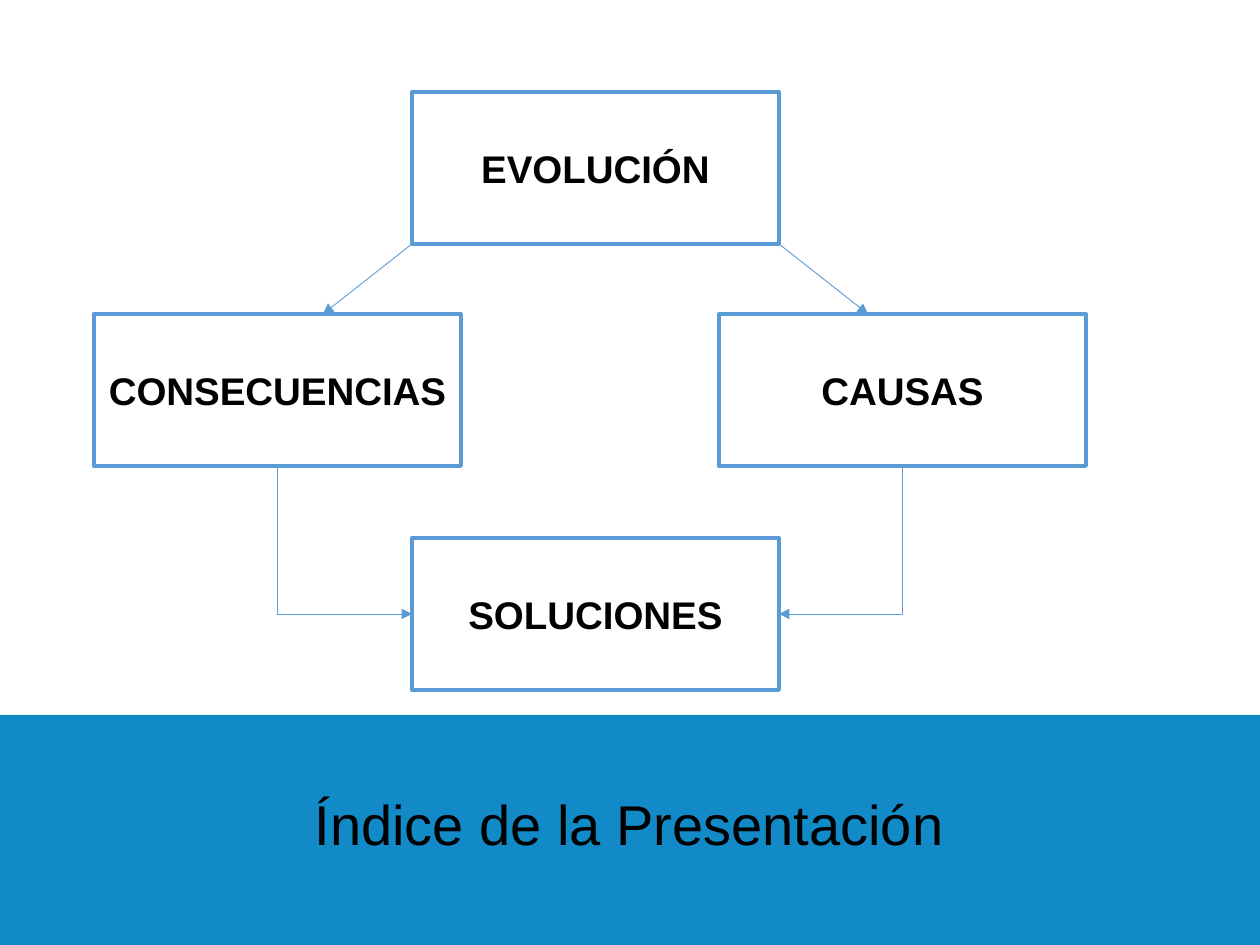
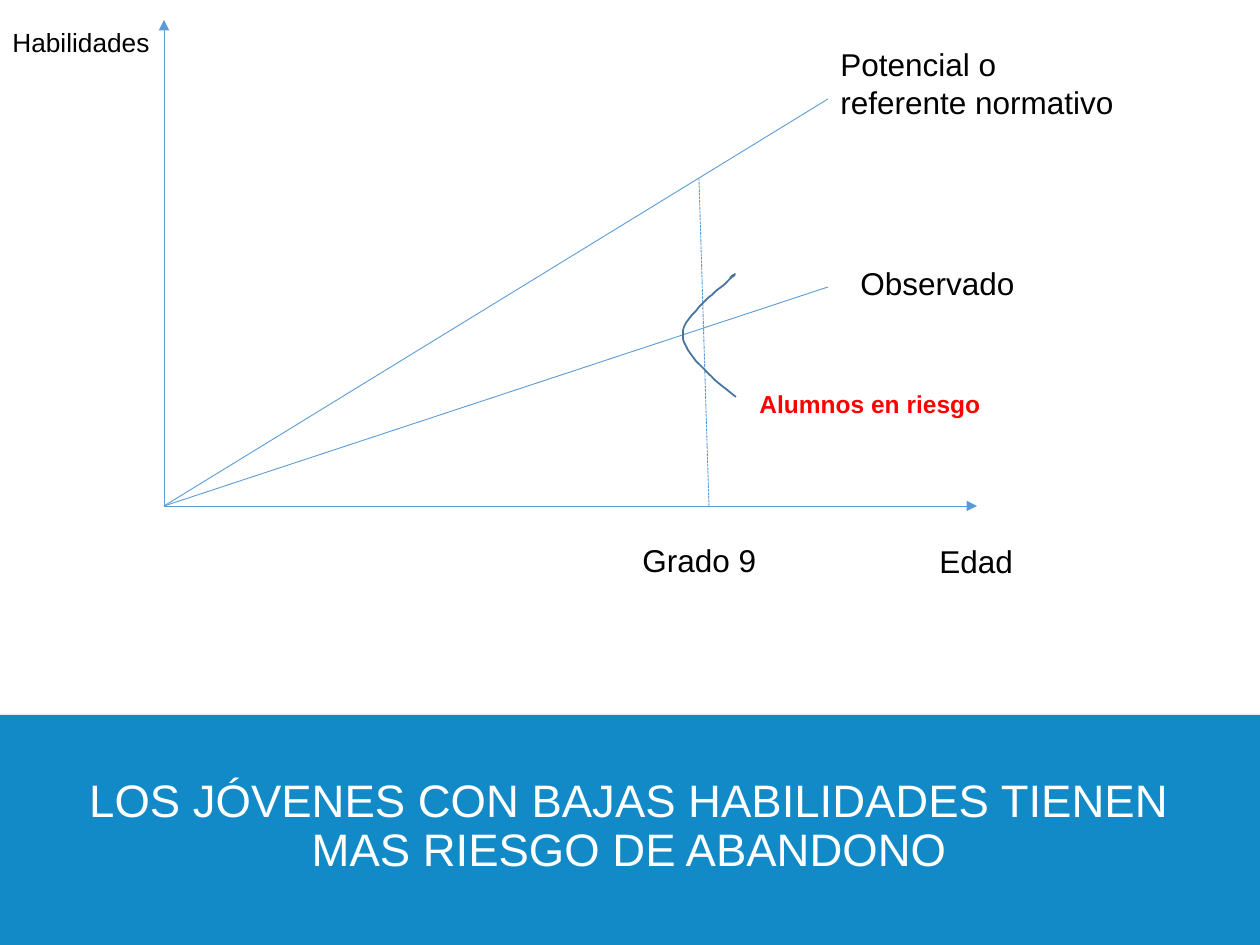
from lxml import etree
from pptx import Presentation
from pptx.dml.color import RGBColor
from pptx.enum.dml import MSO_LINE
from pptx.enum.shapes import MSO_CONNECTOR, MSO_SHAPE
from pptx.enum.text import MSO_ANCHOR, PP_ALIGN
from pptx.oxml.ns import qn
from pptx.util import Emu, Pt

SCALE = 914400 / 126
SLIDE_W, SLIDE_H = 1260, 945
BAND = (0, 715, 1260, 231)
FONT = "Arial"
COLORS = {
    "band": "118AC7",
    "line": "5B9BD5",
    "curve": "43739E",
    "text": "000000",
    "light": "FFFFFF",
    "risk": "FF0000",
}


def px(*lengths):
    return [Emu(round(n * SCALE)) for n in lengths]


def rgb(name):
    return RGBColor.from_string(COLORS[name])


def style_text(p, size, color="text", bold=False, align=None):
    p.alignment = align
    p.font.name = FONT
    p.font.size = Pt(size)
    p.font.bold = bold
    p.font.color.rgb = rgb(color)


def add_band_title(prs, text, size, color):
    """Add a title-only slide with its title centred on the bottom band."""
    slide = prs.slides.add_slide(prs.slide_layouts[5])
    x, y, w, h = BAND
    band = slide.shapes.add_shape(MSO_SHAPE.RECTANGLE, *px(x, y, w, h))
    band.shadow.inherit = False
    band.fill.solid()
    band.fill.fore_color.rgb = rgb("band")
    band.line.fill.background()

    title = slide.shapes.title
    slide.shapes._spTree.append(title._element)  # bring in front of the band
    title.left, title.top, title.width, title.height = px(x + 47, y + 56, 1165, 112)
    tf = title.text_frame
    tf.text = text
    tf.word_wrap = True
    tf.vertical_anchor = MSO_ANCHOR.MIDDLE
    p = tf.paragraphs[0]
    style_text(p, size, color, align=PP_ALIGN.CENTER)
    p.line_spacing = 0.9
    return slide


def add_line(slide, start, end, arrow=False, kind=MSO_CONNECTOR.STRAIGHT):
    line = slide.shapes.add_connector(kind, *px(*start, *end))
    line.line.color.rgb = rgb("line")
    line.line.width = Pt(0.5)
    if arrow:
        ln = line.line._get_or_add_ln()
        etree.SubElement(ln, qn("a:tailEnd"), type="triangle")
    etree.SubElement(line._element.spPr, qn("a:effectLst"))
    return line


def add_elbow(slide, start, end):
    """Run an arrow straight down from start, then sideways into end."""
    (x1, y1), (x2, y2) = start, end
    cx, cy = (x1 + x2) / 2, (y1 + y2) / 2
    half_w, half_h = abs(y2 - y1) / 2, abs(x2 - x1) / 2
    to_right = x2 > x1
    if to_right:
        half_w = -half_w  # begins at the right, so the frame is flipped
    line = add_line(slide, (cx - half_w, cy - half_h), (cx + half_w, cy + half_h),
                    arrow=True, kind=MSO_CONNECTOR.ELBOW)
    spPr = line._element.spPr
    spPr.find(qn("a:prstGeom")).set("prst", "bentConnector2")
    degrees = 270 if to_right else 90
    spPr.find(qn("a:xfrm")).set("rot", str(degrees * 60000))


def add_node(slide, text, x, y, w, h):
    sp = slide.shapes.add_shape(MSO_SHAPE.RECTANGLE, *px(x, y, w, h))
    sp.shadow.inherit = False
    sp.fill.background()
    sp.line.color.rgb = rgb("line")
    sp.line.width = Pt(2.25)
    tf = sp.text_frame
    tf.text = text
    tf.word_wrap = True
    tf.vertical_anchor = MSO_ANCHOR.MIDDLE
    style_text(tf.paragraphs[0], 22, bold=True, align=PP_ALIGN.CENTER)


def add_index_diagram(slide, x, y, w, h):
    node_w, node_h = 367, 152
    left, right = x, x + w - node_w
    mid = x + 318
    row, bottom = y + 222, y + h - node_h
    for text, nx, ny in (
        ("EVOLUCIÓN", mid, y),
        ("CONSECUENCIAS", left, row),
        ("CAUSAS", right, row),
        ("SOLUCIONES", mid, bottom),
    ):
        add_node(slide, text, nx, ny, node_w, node_h)

    mid_right = mid + node_w
    spread = 89
    add_line(slide, (mid, y + node_h), (mid - spread, row), arrow=True)
    add_line(slide, (mid_right, y + node_h), (mid_right + spread, row), arrow=True)
    for nx, target_x in ((left, mid), (right, mid_right)):
        add_elbow(slide, (nx + node_w / 2, row + node_h),
                  (target_x, bottom + node_h / 2))


def add_label(slide, text, x, y, w, h, size=18, color="text", bold=False):
    tf = slide.shapes.add_textbox(*px(x, y, w, h)).text_frame
    tf.word_wrap = True
    tf.text = text
    style_text(tf.paragraphs[0], size, color, bold)


def bezier(p0, p1, p2, p3, steps=16):
    """Return points along a cubic curve, without its start."""
    points = []
    for i in range(1, steps + 1):
        t = i / steps
        u = 1 - t
        points.append(tuple(
            u**3 * a + 3 * u * u * t * b + 3 * u * t * t * c + t**3 * d
            for a, b, c, d in zip(p0, p1, p2, p3)))
    return points


def add_risk_curve(slide, x, y):
    """Draw the bulging curve with its upper left corner at x, y."""
    start, bulge, top, tip = (53, 123), (0, 61), (48, 4), (47, 4)
    points = (bezier(start, (26, 101), (1, 80), bulge)
              + bezier(bulge, (-1, 41), (40, 13), top)
              + bezier(top, (57, -4), tip, tip))
    builder = slide.shapes.build_freeform(x + start[0], y + start[1], scale=SCALE)
    builder.add_line_segments([(x + a, y + b) for a, b in points], close=False)
    sp = builder.convert_to_shape()
    sp.shadow.inherit = False
    sp.fill.background()
    sp.line.color.rgb = rgb("curve")
    sp.line.width = Pt(1)


def add_skills_plot(slide, x, y, w, h):
    """Draw the axes along the left and bottom of the box, and what they hold."""
    base = y + h
    origin = (x, base)
    add_line(slide, origin, (x, y), arrow=True)
    add_line(slide, origin, (x + w, base), arrow=True)
    for rise in (407, 219):
        add_line(slide, origin, (x + 664, base - rise))
    grade = add_line(slide, (x + 545, base), (x + 535, base - 327))
    grade.line.dash_style = MSO_LINE.SQUARE_DOT
    add_risk_curve(slide, x + 519, y + 254)

    for text, dx, dy, width, height in (
        ("Edad", 763, 516, 238, 51),
        ("Potencial o referente normativo", 664, 19, 307, 89),
        ("Observado", 684, 238, 228, 51),
        ("Grado 9", 466, 515, 169, 51),
    ):
        add_label(slide, text, x + dx, y + dy, width, height)
    add_label(slide, "Habilidades", x - 164, y, 174, 44, size=15)
    add_label(slide, "Alumnos en riesgo", x + 583, y + 363, 349, 43,
              size=14, color="risk", bold=True)


def main():
    prs = Presentation()
    prs.slide_width, prs.slide_height = px(SLIDE_W, SLIDE_H)

    s = add_band_title(prs, "Índice de la Presentación", 32, "text")
    add_index_diagram(s, 94, 92, 992, 598)

    s = add_band_title(
        prs, "LOS JÓVENES CON BAJAS HABILIDADES TIENEN MAS RIESGO DE ABANDONO",
        26, "light")
    add_skills_plot(s, 164, 20, 813, 486)

    prs.save("out.pptx")


if __name__ == "__main__":
    main()
